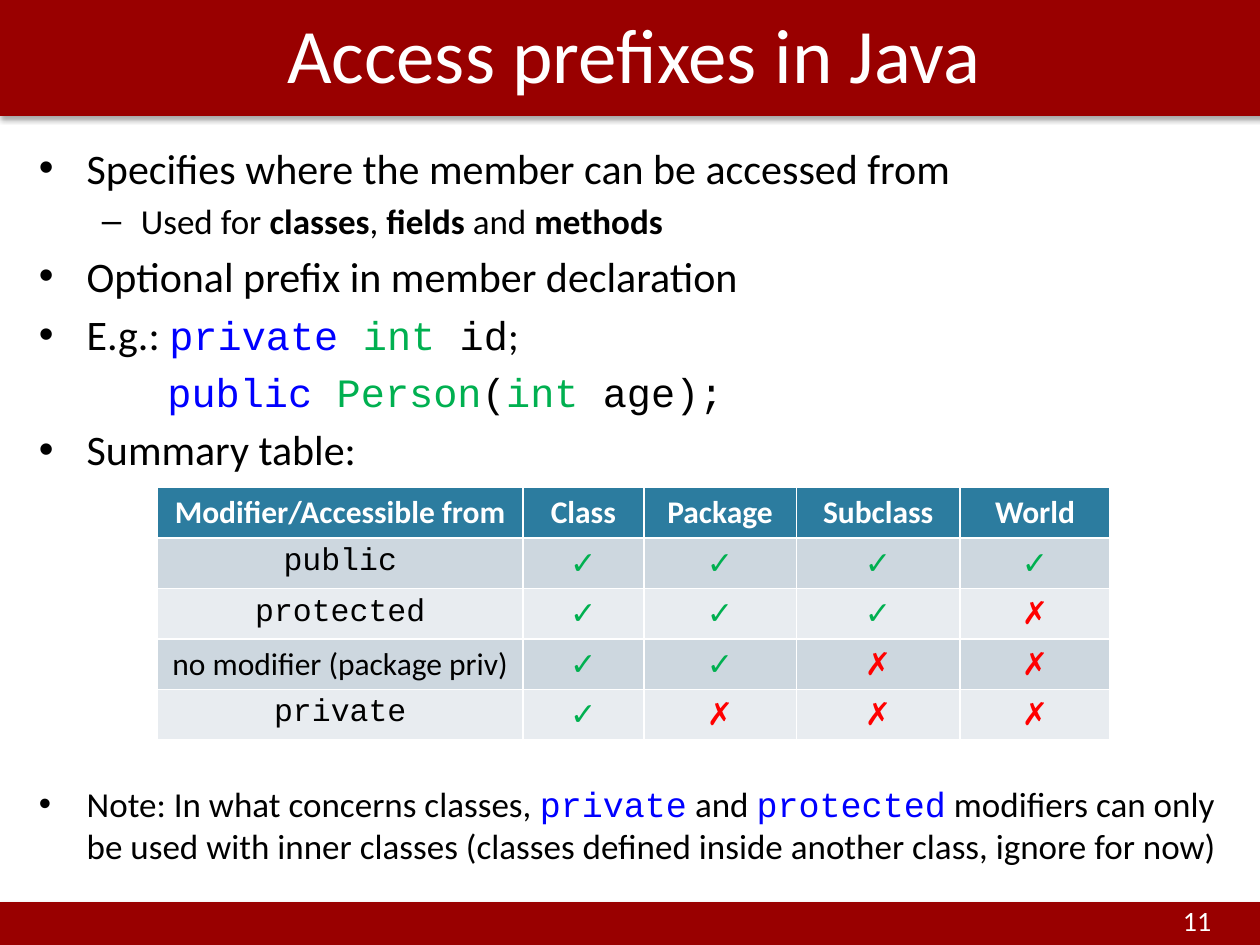
from lxml.etree import SubElement
from pptx import Presentation
from pptx.dml.color import RGBColor
from pptx.enum.shapes import MSO_SHAPE
from pptx.enum.text import MSO_ANCHOR, PP_ALIGN
from pptx.oxml.ns import qn
from pptx.util import Inches, Pt

RED_BAR = RGBColor(0x99, 0x00, 0x00)
WHITE = RGBColor(0xFF, 0xFF, 0xFF)
BLACK = RGBColor(0x00, 0x00, 0x00)
KEYWORD_BLUE = RGBColor(0x00, 0x00, 0xFF)
GREEN = RGBColor(0x00, 0xB0, 0x50)
CROSS_RED = RGBColor(0xFF, 0x00, 0x00)
HEADER_FILL = RGBColor(0x2C, 0x7C, 0x9F)
BAND_FILLS = [RGBColor(0xCD, 0xD7, 0xDF), RGBColor(0xE8, 0xEC, 0xF0)]

BODY_FONT = "Calibri"
CODE_FONT = "Courier New"

# Run styles: font, colour, bold
PLAIN = (BODY_FONT, BLACK, False)
BOLD = (BODY_FONT, BLACK, True)
LIGHT = (BODY_FONT, WHITE, False)
HEADING = (BODY_FONT, WHITE, True)
CODE = (CODE_FONT, BLACK, False)
KEYWORD = (CODE_FONT, KEYWORD_BLUE, False)
TYPE = (CODE_FONT, GREEN, False)
TICK = (BODY_FONT, GREEN, False)
CROSS = (BODY_FONT, CROSS_RED, False)

# Paragraph levels: left margin, first line indent, bullet
TOP_LEVEL = (0.38, -0.38, "•")
SUB_LEVEL = (0.81, -0.31, "–")
CODE_LEVEL = (1.02, 0, None)

# Paragraphs: level, spacing before in points, runs of text, size and style
POINTS = [
    (TOP_LEVEL, 4.8, [("Specifies where the member can be accessed from", 24, PLAIN)]),
    (SUB_LEVEL, 4, [("Used for ", 20, PLAIN), ("classes", 20, BOLD), (", ", 20, PLAIN),
                    ("fields", 20, BOLD), (" and ", 20, PLAIN), ("methods", 20, BOLD)]),
    (TOP_LEVEL, 4.8, [("Optional prefix in member declaration", 24, PLAIN)]),
    (TOP_LEVEL, 4.8, [("E.g.: ", 24, PLAIN), ("private ", 23, KEYWORD), ("int", 23, TYPE),
                      (" id", 23, CODE), (";", 23, PLAIN)]),
    (CODE_LEVEL, 4.6, [("public ", 23, KEYWORD), ("Person", 23, TYPE), ("(", 23, CODE),
                       ("int", 23, TYPE), (" age);", 23, CODE)]),
    (TOP_LEVEL, 4.8, [("Summary table:", 24, PLAIN)]),
]
NOTE = [
    (TOP_LEVEL, 4, [("Note: In what concerns classes, ", 20, PLAIN), ("private", 20, KEYWORD),
                    (" and ", 20, PLAIN), ("protected", 20, KEYWORD),
                    (" modifiers can only be used with inner classes "
                     "(classes defined inside another class, ignore for now)", 20, PLAIN)]),
]

TABLE_HEADINGS = ["Modifier/Accessible from", "Class", "Package", "Subclass", "World"]
COLUMN_WIDTHS = [2.9, 0.96, 1.21, 1.3, 1.19]
# Modifier, its style, and how many of the columns it is accessible from
ACCESS_ROWS = [
    ("public", CODE, 4),
    ("protected", CODE, 3),
    ("no modifier (package priv)", PLAIN, 2),
    ("private", CODE, 1),
]


def format_run(run, size, style):
    name, color, bold = style
    run.font.name = name
    run.font.size = Pt(size)
    run.font.color.rgb = color
    run.font.bold = bold


def set_text(text_frame, text, size, style, alignment):
    text_frame.text = text
    paragraph = text_frame.paragraphs[0]
    paragraph.alignment = alignment
    format_run(paragraph.runs[0], size, style)


def set_level(paragraph, level):
    margin, indent, bullet = level
    properties = paragraph._p.get_or_add_pPr()
    properties.set("marL", str(Inches(margin)))
    properties.set("indent", str(Inches(indent)))
    if bullet:
        SubElement(properties, qn("a:buFont"), typeface="Arial")
        SubElement(properties, qn("a:buChar"), char=bullet)
    else:
        SubElement(properties, qn("a:buNone"))


def add_bar(slide, left, top, width, height):
    bar = slide.shapes.add_shape(MSO_SHAPE.RECTANGLE, left, top, width, height)
    bar.fill.solid()
    bar.fill.fore_color.rgb = RED_BAR
    bar.line.fill.background()
    # Soft shadow straight below the bar
    bar.shadow.inherit = False
    effects = bar._element.spPr.find(qn("a:effectLst"))
    shadow = SubElement(effects, qn("a:outerShdw"), blurRad=str(Pt(3.1)), dist=str(Pt(1.8)),
                        dir="5400000", rotWithShape="0")
    color = SubElement(shadow, qn("a:srgbClr"), val="000000")
    SubElement(color, qn("a:alpha"), val="35000")


def place_title(slide, left, top, width, height):
    title = slide.shapes.title
    title.left, title.top, title.width, title.height = left, top, width, height
    title.text_frame.vertical_anchor = MSO_ANCHOR.MIDDLE
    set_text(title.text_frame, "Access prefixes in Java", 44, LIGHT, PP_ALIGN.CENTER)
    # Bring the title in front of the bars
    slide.shapes._spTree.append(title._element)


def add_page_number(slide, left, top, width, height):
    box = slide.shapes.add_textbox(left, top, width, height)
    set_text(box.text_frame, "11", 16, LIGHT, PP_ALIGN.LEFT)


def add_points(slide, points, left, top, width, height):
    text_frame = slide.shapes.add_textbox(left, top, width, height).text_frame
    text_frame.word_wrap = True
    for index, (level, space_before, runs) in enumerate(points):
        paragraph = text_frame.add_paragraph() if index else text_frame.paragraphs[0]
        paragraph.space_before = Pt(space_before)
        set_level(paragraph, level)
        for text, size, style in runs:
            run = paragraph.add_run()
            run.text = text
            format_run(run, size, style)


def fill_cell(cell, text, style, fill):
    cell.fill.solid()
    cell.fill.fore_color.rgb = fill
    cell.margin_left = cell.margin_right = Inches(0.05)
    cell.margin_top = cell.margin_bottom = Inches(0.05)
    set_text(cell.text_frame, text, 18, style, PP_ALIGN.CENTER)


def add_access_table(slide, left, top, width, height):
    row_count = len(ACCESS_ROWS) + 1
    column_count = len(TABLE_HEADINGS)
    table = slide.shapes.add_table(row_count, column_count, left, top, width, height).table
    for column, column_width in zip(table.columns, COLUMN_WIDTHS):
        column.width = Inches(column_width)
    for column, heading in enumerate(TABLE_HEADINGS):
        fill_cell(table.cell(0, column), heading, HEADING, HEADER_FILL)
    for row, (modifier, style, reach) in enumerate(ACCESS_ROWS, start=1):
        fill = BAND_FILLS[(row - 1) % 2]
        fill_cell(table.cell(row, 0), modifier, style, fill)
        for column in range(1, column_count):
            text, mark_style = ("✓", TICK) if column <= reach else ("✗", CROSS)
            fill_cell(table.cell(row, column), text, mark_style, fill)


def main():
    presentation = Presentation()
    presentation.slide_width = Inches(10)
    presentation.slide_height = Inches(7.5)
    slide = presentation.slides.add_slide(presentation.slide_layouts[5])

    # Footer and title bars
    add_bar(slide, Inches(0), Inches(7.16), Inches(10.04), Inches(0.34))
    add_bar(slide, Inches(0), Inches(-0.01), Inches(10.04), Inches(0.93))
    add_page_number(slide, Inches(9.29), Inches(7.12), Inches(0.98), Inches(0.37))
    place_title(slide, Inches(-0.07), Inches(-0.21), Inches(10.21), Inches(1.25))

    # Points, summary table and note
    add_points(slide, POINTS, Inches(0.21), Inches(1.08), Inches(9.65), Inches(2.62))
    add_access_table(slide, Inches(1.25), Inches(3.87), Inches(7.56), Inches(2))
    add_points(slide, NOTE, Inches(0.21), Inches(6.16), Inches(9.79), Inches(1.34))

    presentation.save("out.pptx")


if __name__ == "__main__":
    main()
